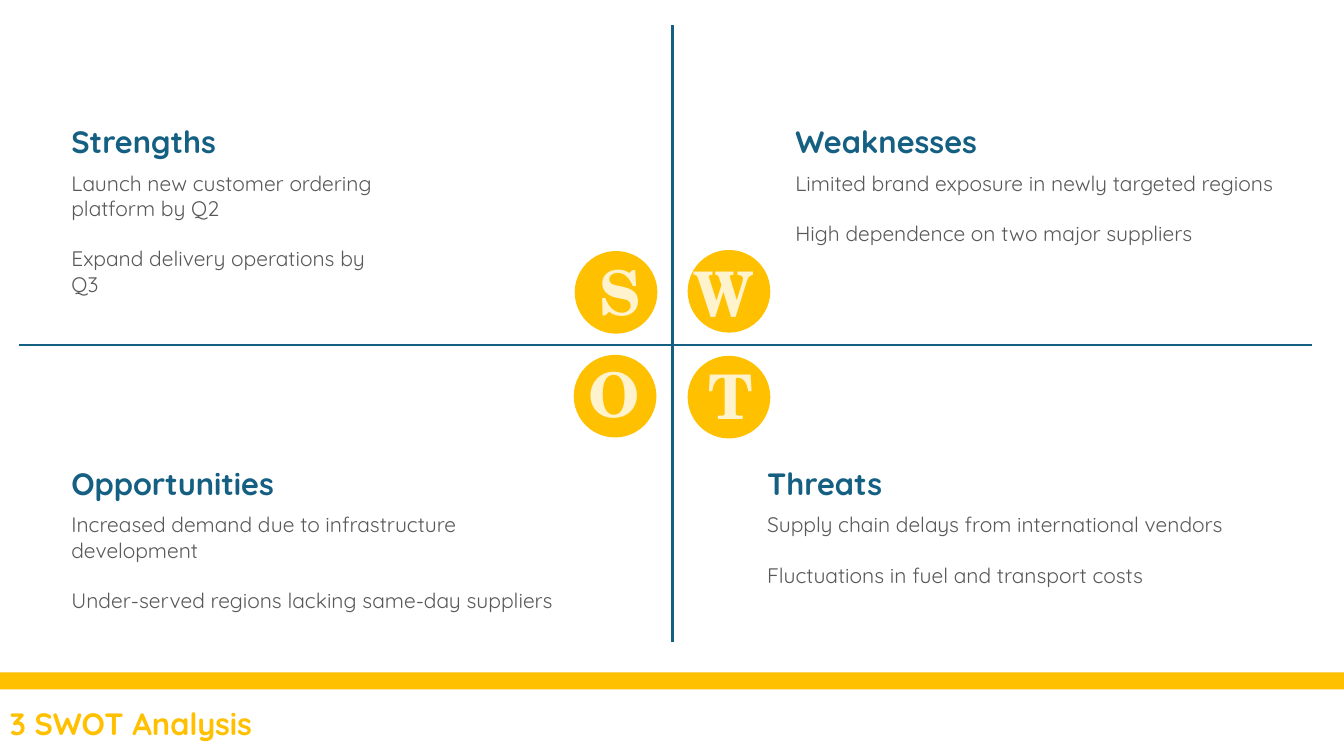
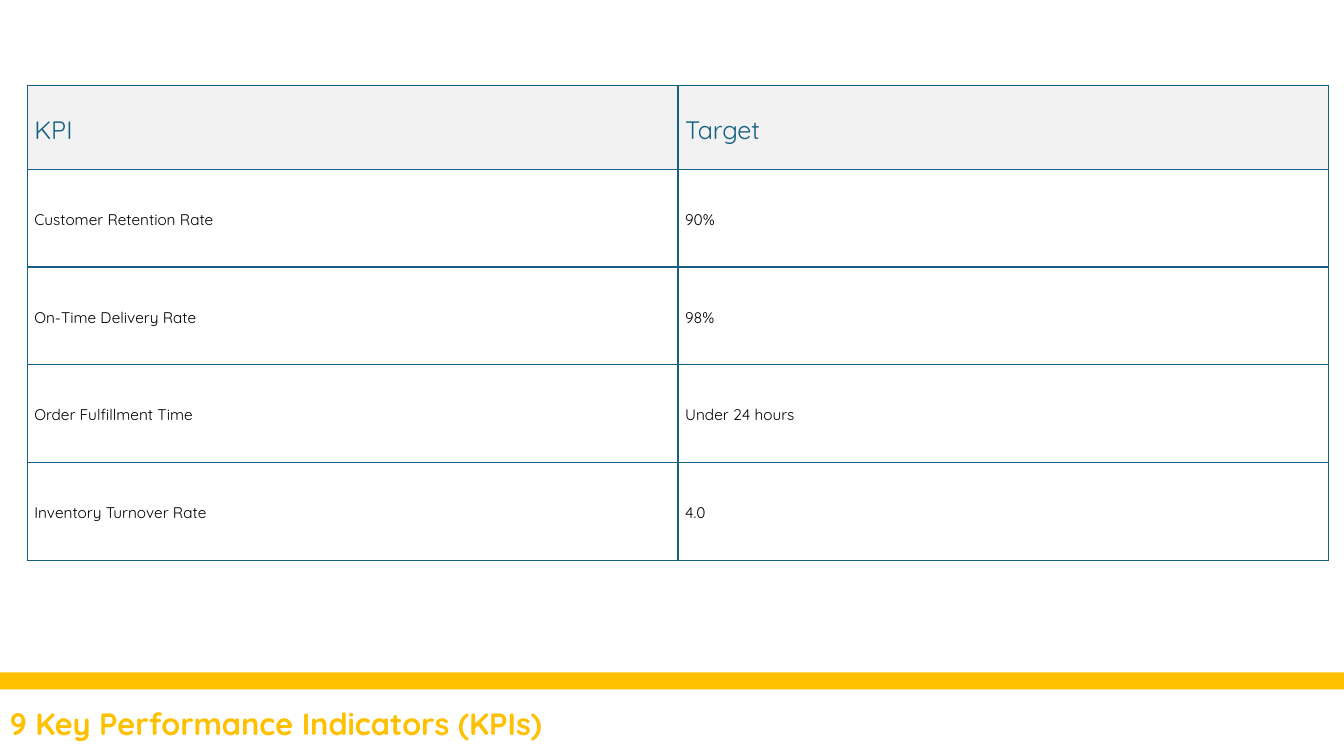
from dataclasses import dataclass

from lxml.etree import SubElement
from pptx import Presentation
from pptx.dml.color import RGBColor
from pptx.enum.shapes import MSO_CONNECTOR, MSO_SHAPE
from pptx.enum.text import MSO_ANCHOR
from pptx.oxml.ns import qn
from pptx.util import Inches, Pt


@dataclass(frozen=True)
class Theme:
    gold: str = "FFC000"
    cream: str = "FFF3CD"
    blue: str = "156082"
    grey: str = "595959"
    black: str = "000000"
    header_fill: str = "F2F2F2"
    font: str = "Quicksand"
    letter_font: str = "TeX Gyre Schola"
    title_size: float = 22
    body_size: float = 15
    letter_size: float = 44
    header_size: float = 18
    cell_size: float = 11
    line_width: float = 1.5
    border_width: float = 1


class DeckBuilder:
    def __init__(self, theme):
        self.theme = theme
        self.deck = Presentation()
        self.deck.slide_width = Inches(13.33)
        self.deck.slide_height = Inches(7.5)
        self.page = None

    def add_page(self, title):
        """Start a slide with the gold band and its title below."""
        self.page = self.deck.slides.add_slide(self.deck.slide_layouts[6])
        self.shape(MSO_SHAPE.RECTANGLE, 0, 6.67, 13.33, 0.17)
        self.heading(title, 0, 6.94, 9.17, self.theme.gold)

    def style(self, para, size, color, bold=False, font=None):
        para.font.name = font or self.theme.font
        para.font.size = Pt(size)
        para.font.bold = bold
        para.font.color.rgb = RGBColor.from_string(color)

    def shape(self, kind, left, top, width, height):
        shape = self.page.shapes.add_shape(
            kind, Inches(left), Inches(top), Inches(width), Inches(height))
        shape.shadow.inherit = False
        shape.fill.solid()
        shape.fill.fore_color.rgb = RGBColor.from_string(self.theme.gold)
        shape.line.fill.background()

    def text(self, lines, left, top, width, height, size, color,
             bold=False, font=None, gap=0):
        box = self.page.shapes.add_textbox(
            Inches(left), Inches(top), Inches(width), Inches(height))
        frame = box.text_frame
        frame.word_wrap = True
        frame.text = "\n".join(lines)
        for index, para in enumerate(frame.paragraphs):
            self.style(para, size, color, bold, font)
            if index:
                para.space_before = Pt(gap)

    def heading(self, title, left, top, width, color):
        self.text([title], left, top, width, 0.47,
                  self.theme.title_size, color, bold=True)

    def line(self, x1, y1, x2, y2):
        line = self.page.shapes.add_connector(
            MSO_CONNECTOR.STRAIGHT, Inches(x1), Inches(y1), Inches(x2), Inches(y2))
        line.line.color.rgb = RGBColor.from_string(self.theme.blue)
        line.line.width = Pt(self.theme.line_width)
        SubElement(line._element.spPr, qn("a:effectLst"))

    def quadrant(self, title, points, left, top, width, height):
        self.heading(title, left, top, 3.19, self.theme.blue)
        self.text(points, left, top + 0.47, width, height,
                  self.theme.body_size, self.theme.grey, gap=18)

    def badge(self, circle):
        self.shape(MSO_SHAPE.OVAL, *circle, 0.82, 0.82)

    def letter(self, letter, place):
        self.text([letter], *place, 0.67, 0.84, self.theme.letter_size,
                  self.theme.cream, bold=True, font=self.theme.letter_font)

    def border(self, cell):
        properties = cell._tc.get_or_add_tcPr()
        for side in ("lnL", "lnR", "lnT", "lnB"):
            edge = SubElement(properties, qn(f"a:{side}"),
                              w=str(Pt(self.theme.border_width)))
            fill = SubElement(edge, qn("a:solidFill"))
            SubElement(fill, qn("a:srgbClr"), val=self.theme.blue)

    def cell(self, cell, text, is_header):
        self.border(cell)
        if is_header:
            cell.fill.solid()
            cell.fill.fore_color.rgb = RGBColor.from_string(self.theme.header_fill)
        else:
            cell.fill.background()
        cell.vertical_anchor = MSO_ANCHOR.MIDDLE
        cell.margin_left = cell.margin_right = Inches(0.07)
        cell.margin_top = cell.margin_bottom = 0
        cell.text = text
        para = cell.text_frame.paragraphs[0]
        para.line_spacing = 1.15
        para.space_after = Pt(8)
        if is_header:
            self.style(para, self.theme.header_size, self.theme.blue)
        else:
            self.style(para, self.theme.cell_size, self.theme.black)

    def table(self, rows, left, top, width, header_height, row_height):
        height = header_height + row_height * (len(rows) - 1)
        table = self.page.shapes.add_table(
            len(rows), len(rows[0]), Inches(left), Inches(top),
            Inches(width), Inches(height)).table
        table.first_row = table.horz_banding = False
        for r, texts in enumerate(rows):
            table.rows[r].height = Inches(row_height if r else header_height)
            for c, text in enumerate(texts):
                self.cell(table.cell(r, c), text, is_header=r == 0)


QUADRANTS = [
    ("Strengths",
     ["Launch new customer ordering platform by Q2",
      "Expand delivery operations by Q3"], 0.61, 1.17, 3.33, 1.36),
    ("Weaknesses",
     ["Limited brand exposure in newly targeted regions",
      "High dependence on two major suppliers"], 7.79, 1.17, 5.07, 1.36),
    ("Opportunities",
     ["Increased demand due to infrastructure development",
      "Under-served regions lacking same-day suppliers"], 0.61, 4.56, 5.13, 1.11),
    ("Threats",
     ["Supply chain delays from international vendors",
      "Fluctuations in fuel and transport costs"], 7.51, 4.56, 5.04, 1.11),
]

# Letter, corner of its circle, corner of its text
BADGES = [
    ("S", (5.7, 2.49), (5.85, 2.47)),
    ("W", (6.82, 2.48), (6.78, 2.48)),
    ("O", (5.69, 3.52), (5.74, 3.48)),
    ("T", (6.82, 3.53), (6.93, 3.5)),
]

KPI_ROWS = [
    ("KPI", "Target"),
    ("Customer Retention Rate", "90%"),
    ("On-Time Delivery Rate", "98%"),
    ("Order Fulfillment Time", "Under 24 hours"),
    ("Inventory Turnover Rate", "4.0"),
]


def build_swot(builder):
    builder.add_page("3 SWOT Analysis")
    builder.line(6.67, 0.25, 6.67, 6.37)
    builder.line(0.19, 3.42, 13.01, 3.42)
    for quadrant in QUADRANTS:
        builder.quadrant(*quadrant)
    for _, circle, _ in BADGES:
        builder.badge(circle)
    for letter, _, place in BADGES:
        builder.letter(letter, place)


def build_kpis(builder):
    builder.add_page("9 Key Performance Indicators (KPIs)")
    builder.table(KPI_ROWS, 0.27, 0.85, 12.91, 0.83, 0.97)


def main():
    builder = DeckBuilder(Theme())
    build_swot(builder)
    build_kpis(builder)
    builder.deck.save("out.pptx")


if __name__ == "__main__":
    main()
